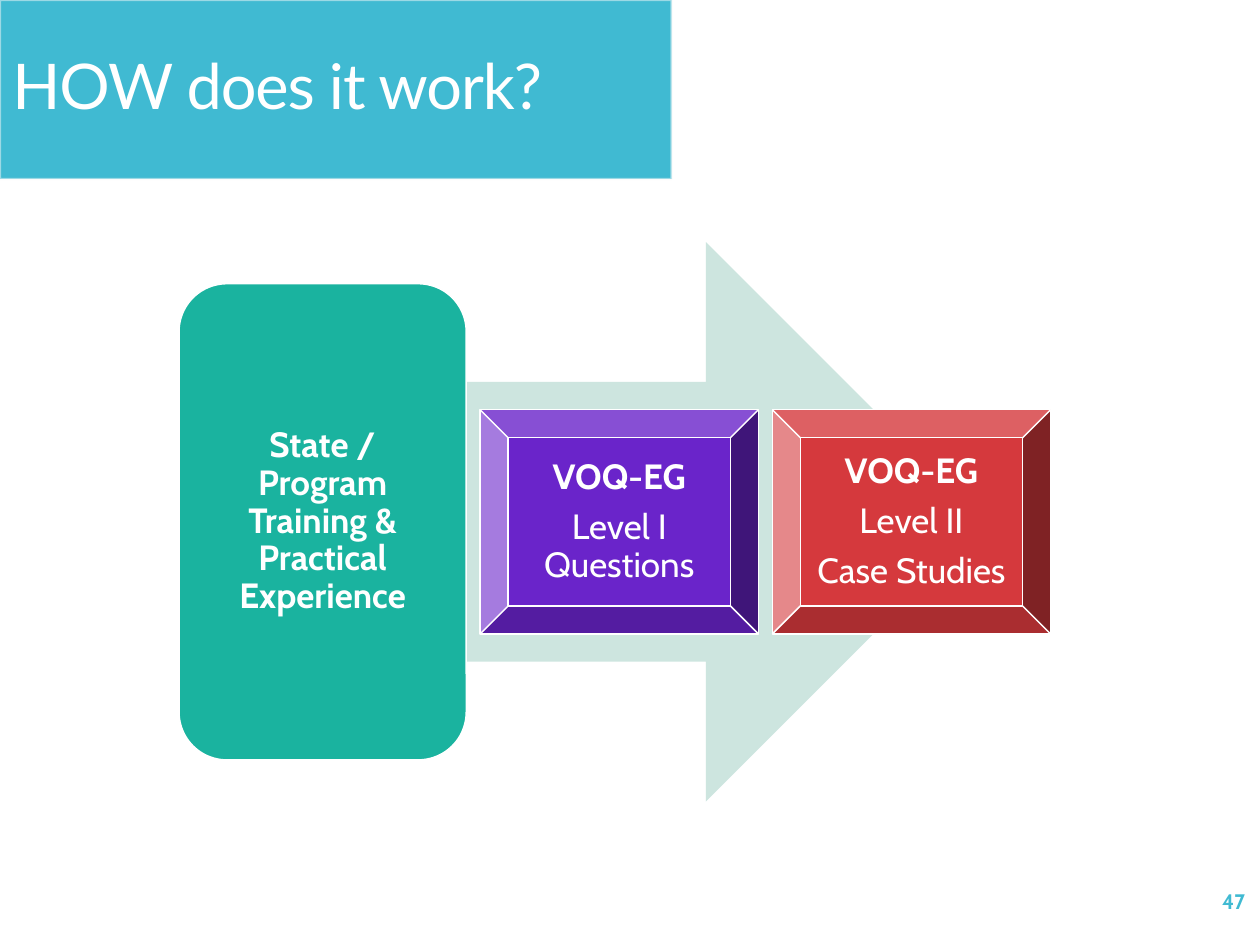
from dataclasses import dataclass

import pptx
import pptx.dml.color
import pptx.enum.shapes
import pptx.enum.text
import pptx.oxml
import pptx.oxml.ns
import pptx.util

Cm, Pt = pptx.util.Cm, pptx.util.Pt
RGBColor = pptx.dml.color.RGBColor
Preset = pptx.enum.shapes.MSO_SHAPE
Align = pptx.enum.text.PP_ALIGN

WHITE = RGBColor(0xFF, 0xFF, 0xFF)
OFF_WHITE = RGBColor(0xF9, 0xF9, 0xF9)
SKY = RGBColor(0x40, 0xBA, 0xD2)
MINT = RGBColor(0xCD, 0xE5, 0xDF)
TEAL = RGBColor(0x1A, 0xB3, 0x9F)
PURPLE = RGBColor(0x6A, 0x24, 0xCA)
RED = RGBColor(0xD5, 0x39, 0x3D)

STAGE_FONT = {"name": "Cabin", "size": Pt(20)}
STAGE_PARAGRAPH = {"alignment": Align.CENTER, "line_spacing": 0.9, "space_after": Pt(7)}
STAGE_MARGINS = {f"margin_{side}": Cm(0.2) for side in ("left", "top", "right", "bottom")}

ROW_LEFT = 3.61
ROW_MIDDLE = 10.52
ROW_GAP = 0.28

ASSESSMENT = "VOQ-EG"


@dataclass
class Stage:
    preset: Preset
    width: float
    height: float
    fill: RGBColor
    heading: str
    details: tuple[str, ...] = ()


STAGES = [
    Stage(Preset.ROUNDED_RECTANGLE, 5.79, 9.6, TEAL,
          "State / Program Training & Practical Experience"),
    Stage(Preset.BEVEL, 5.61, 4.52, PURPLE, ASSESSMENT, ("Level I Questions",)),
    Stage(Preset.BEVEL, 5.61, 4.52, RED, ASSESSMENT, ("Level II", "Case Studies")),
]


def apply(target, values: dict) -> None:
    for attribute, value in values.items():
        setattr(target, attribute, value)


def add_block(slide, preset: Preset, left: float, top: float, width: float, height: float,
              fill: RGBColor, line: RGBColor | None = None, line_width: float = 0.85):
    """Add a flat preset shape, measured in centimetres, with an optional outline."""
    block = slide.shapes.add_shape(preset, Cm(left), Cm(top), Cm(width), Cm(height))
    block.shadow.inherit = False
    block.fill.solid()
    block.fill.fore_color.rgb = fill
    if line is None:
        block.line.fill.background()
    else:
        block.line.color.rgb = line
        block.line.width = Pt(line_width)
    return block


def write(paragraph, text: str, color: RGBColor, font: dict, layout: dict):
    run = paragraph.add_run()
    run.text = text
    run.font.color.rgb = color
    apply(run.font, font)
    apply(paragraph, layout)
    return run


def prepare_frame(shape, margins: dict):
    frame = shape.text_frame
    apply(frame, {"word_wrap": True,
                  "vertical_anchor": pptx.enum.text.MSO_ANCHOR.MIDDLE, **margins})
    return frame


def add_title(slide) -> None:
    banner = add_block(slide, Preset.RECTANGLE, 0, 0, 13.54, 3.61, SKY, OFF_WHITE, 1.35)
    outline_color = banner.line.fill._xPr.find(".//" + pptx.oxml.ns.qn("a:srgbClr"))
    outline_color.append(pptx.oxml.parse_xml(
        f'<a:alpha {pptx.oxml.ns.nsdecls("a")} val="50000"/>'))
    title = write(prepare_frame(banner, {}).paragraphs[0], "HOW does it work?", WHITE,
                  {"name": "Lato", "size": Pt(36)},
                  {"alignment": Align.LEFT, "line_spacing": 0.9})
    title.font._element.set("spc", "-60")


def add_stage(slide, stage: Stage, left: float) -> None:
    block = add_block(slide, stage.preset, left, ROW_MIDDLE - stage.height / 2,
                      stage.width, stage.height, stage.fill, WHITE)
    frame = prepare_frame(block, STAGE_MARGINS)
    write(frame.paragraphs[0], stage.heading, WHITE,
          {**STAGE_FONT, "bold": True}, STAGE_PARAGRAPH)
    for detail in stage.details:
        write(frame.add_paragraph(), detail, WHITE,
              {**STAGE_FONT, "bold": False}, STAGE_PARAGRAPH)


def add_page_number(slide) -> None:
    number = slide.shapes.add_textbox(Cm(22.15), Cm(17.65), Cm(3.2), Cm(1.02))
    write(prepare_frame(number, {}).paragraphs[0], "47", SKY,
          {"name": "Cabin", "size": Pt(12), "bold": True}, {"alignment": Align.RIGHT})


def main() -> None:
    deck = pptx.Presentation()
    apply(deck, {"slide_width": Cm(25.4), "slide_height": Cm(19.05)})
    slide = deck.slides.add_slide(deck.slide_layouts[6])

    add_page_number(slide)
    add_title(slide)
    arrow_height = 11.28
    add_block(slide, Preset.RIGHT_ARROW, 4.93, ROW_MIDDLE - arrow_height / 2,
              14.94, arrow_height, MINT)
    left = ROW_LEFT
    for stage in STAGES:
        add_stage(slide, stage, left)
        left += stage.width + ROW_GAP

    deck.save("out.pptx")


if __name__ == "__main__":
    main()
